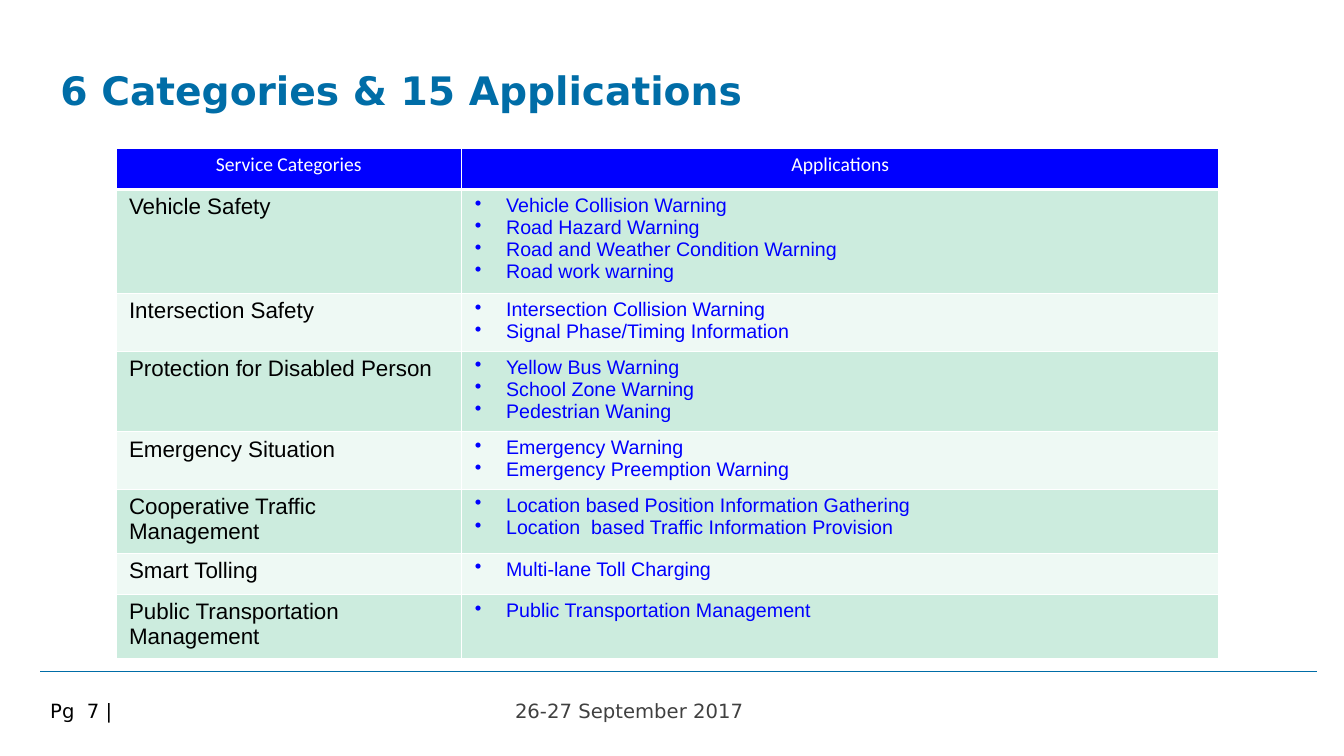
"""Build the slide that lists service categories and their applications."""
import pptx
import pptx.dml.color
import pptx.enum.shapes
import pptx.enum.text
import pptx.oxml
import pptx.oxml.ns
import pptx.util

Inches = pptx.util.Inches
Pt = pptx.util.Pt
RGBColor = pptx.dml.color.RGBColor

TEAL = RGBColor(0x00, 0x6D, 0xA7)
GREY = RGBColor(0x40, 0x40, 0x40)
BLACK = RGBColor(0x00, 0x00, 0x00)
WHITE = RGBColor(0xFF, 0xFF, 0xFF)
BLUE = RGBColor(0x00, 0x00, 0xFF)
GREEN = RGBColor(0xCC, 0xEC, 0xDE)
PALE_GREEN = RGBColor(0xEE, 0xF9, 0xF4)

HEADINGS = ["Service Categories", "Applications"]
SERVICES = [
    ("Vehicle Safety", ["Vehicle Collision Warning", "Road Hazard Warning",
                        "Road and Weather Condition Warning", "Road work warning"]),
    ("Intersection Safety", ["Intersection Collision Warning",
                             "Signal Phase/Timing Information"]),
    ("Protection for Disabled Person", ["Yellow Bus Warning", "School Zone Warning",
                                        "Pedestrian Waning"]),
    ("Emergency Situation", ["Emergency Warning", "Emergency Preemption Warning"]),
    ("Cooperative Traffic Management", ["Location based Position Information Gathering",
                                        "Location  based Traffic Information Provision"]),
    ("Smart Tolling", ["Multi-lane Toll Charging"]),
    ("Public Transportation\nManagement", ["Public Transportation Management"]),
]
COLUMN_WIDTHS = [3.43, 7.51]
ROW_HEIGHTS = [0.41, 1.03, 0.57, 0.8, 0.57, 0.63, 0.41, 0.63]


def style_runs(para, font_name, size, color, bold=False):
    """Format every run of a paragraph."""
    for span in para.runs:
        span.font.name = font_name
        span.font.size = Pt(size)
        span.font.color.rgb = color
        span.font.bold = bold


def add_text(page, text, place, size, color, bold=False, insets=(0.1, 0.05, 0.1, 0.05)):
    """Add a one-paragraph text box and return its paragraph."""
    box = page.shapes.add_textbox(*[Inches(length) for length in place])
    frame = box.text_frame
    frame.word_wrap = True
    frame.margin_left, frame.margin_top, frame.margin_right, frame.margin_bottom = [
        Inches(inset) for inset in insets]
    frame.text = text
    para = frame.paragraphs[0]
    style_runs(para, "DejaVu Sans", size, color, bold)
    return para


def add_rule(page, left, right, top):
    """Add the thin horizontal line above the footer."""
    rule = page.shapes.add_connector(
        pptx.enum.shapes.MSO_CONNECTOR.STRAIGHT,
        Inches(left), Inches(top), Inches(right), Inches(top))
    rule.line.color.rgb = TEAL
    rule.line.width = Pt(0.75)
    properties = rule._element.spPr
    properties.append(pptx.oxml.parse_xml(
        f'<a:effectLst {pptx.oxml.ns.nsdecls("a")}/>'))


def set_borders(cell, bottom_width):
    """Draw white lines on the four sides of a cell."""
    properties = cell._tc.get_or_add_tcPr()
    widths = {"lnL": 1, "lnR": 1, "lnT": 1, "lnB": bottom_width}
    for position, (side, width) in enumerate(widths.items()):
        properties.insert(position, pptx.oxml.parse_xml(
            f'<a:{side} {pptx.oxml.ns.nsdecls("a")} w="{Pt(width)}">'
            f'<a:solidFill><a:srgbClr val="{WHITE}"/></a:solidFill></a:{side}>'))


def add_bullet(para):
    """Give a paragraph a round bullet with a hanging indent."""
    properties = para._p.get_or_add_pPr()
    properties.set("marL", str(Inches(0.31)))
    properties.set("indent", str(Inches(-0.31)))
    properties.append(pptx.oxml.parse_xml(
        f'<a:buChar {pptx.oxml.ns.nsdecls("a")} char="•"/>'))


def fill_cell(cell, text, fill, font_name, size, color, bottom_width=1):
    """Write and format a cell and return its paragraphs."""
    cell.fill.solid()
    cell.fill.fore_color.rgb = fill
    cell.margin_left = cell.margin_right = Inches(0.13)
    cell.margin_top = cell.margin_bottom = Inches(0.05)
    set_borders(cell, bottom_width)
    cell.text_frame.text = text
    for para in cell.text_frame.paragraphs:
        style_runs(para, font_name, size, color)
    return cell.text_frame.paragraphs


def add_services_table(page):
    """Add the table of categories and applications."""
    table = page.shapes.add_table(
        len(ROW_HEIGHTS), len(COLUMN_WIDTHS), Inches(1.15), Inches(1.47),
        Inches(sum(COLUMN_WIDTHS)), Inches(sum(ROW_HEIGHTS))).table
    for column, width in zip(table.columns, COLUMN_WIDTHS):
        column.width = Inches(width)
    for row, height in zip(table.rows, ROW_HEIGHTS):
        row.height = Inches(height)
    for index, heading in enumerate(HEADINGS):
        paras = fill_cell(table.cell(0, index), heading, BLUE, "Calibri", 14, WHITE, 3)
        paras[0].alignment = pptx.enum.text.PP_ALIGN.CENTER
    for index, (category, applications) in enumerate(SERVICES, start=1):
        fill = GREEN if index % 2 else PALE_GREEN
        fill_cell(table.cell(index, 0), category, fill, "Arial", 16, BLACK)
        for para in fill_cell(table.cell(index, 1), "\n".join(applications),
                              fill, "Arial", 14, BLUE):
            add_bullet(para)


def main():
    """Build and save the deck."""
    deck = pptx.Presentation()
    deck.slide_width = Inches(13.33)
    deck.slide_height = Inches(7.5)
    page = deck.slides.add_slide(deck.slide_layouts[6])
    add_rule(page, 0.4, 13.06, 6.66)
    add_text(page, "26-27 September 2017", (5.01, 6.88, 3.86, 0.34), 14, GREY)
    page_number = add_text(page, "Pg  7 |", (0.4, 6.91, 2.76, 0.39), 14, BLACK)
    page_number.line_spacing = 0.93
    title = add_text(page, "6 Categories & 15 Applications", (0.6, 0.68, 12.06, 0.71),
                     28, TEAL, True, (0, 0.02, 0, 0))
    title.line_spacing = 0.94
    add_services_table(page)
    deck.save("out.pptx")


if __name__ == "__main__":
    main()
